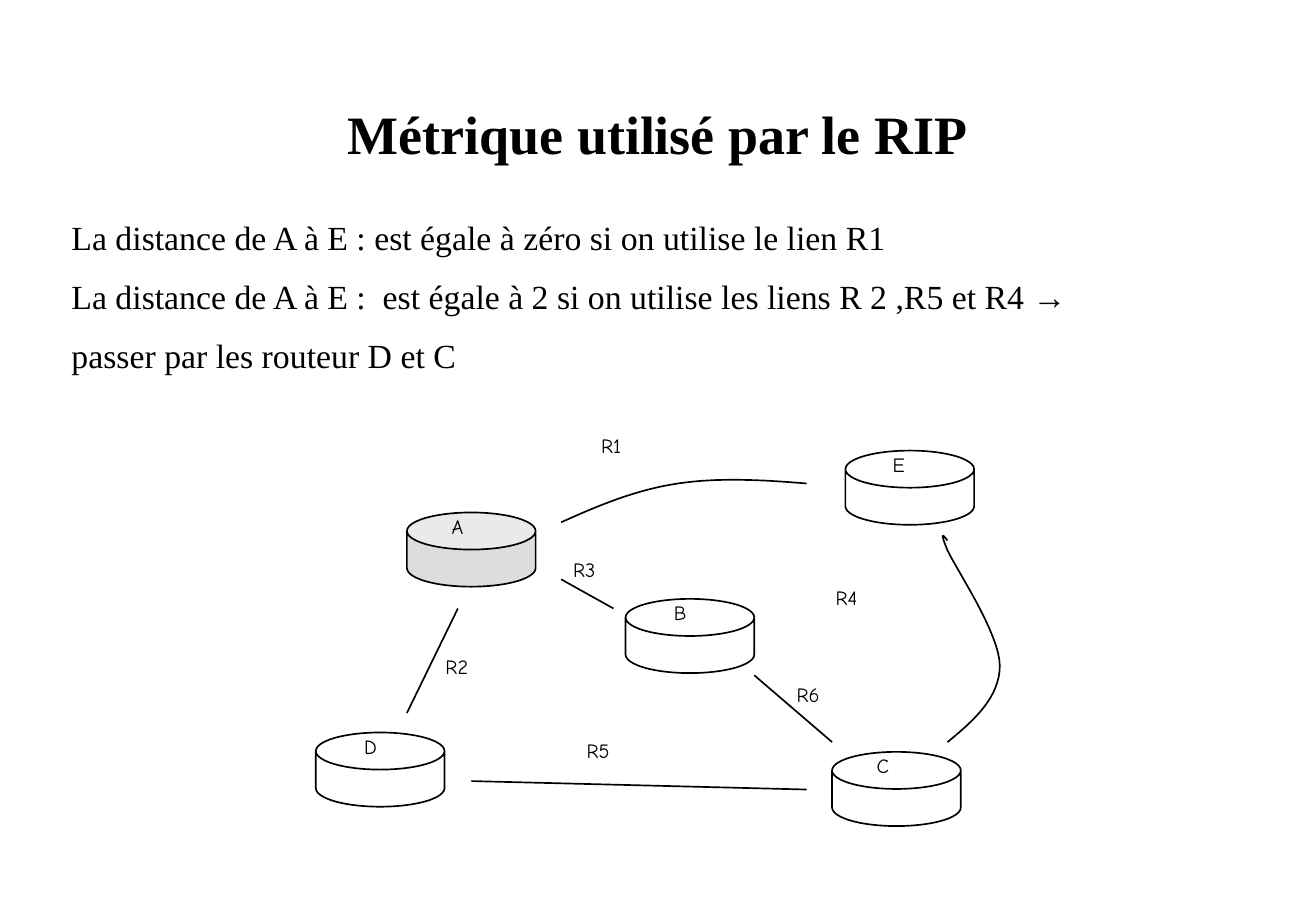
from lxml.etree import SubElement
from pptx import Presentation
from pptx.dml.color import RGBColor
from pptx.enum.shapes import MSO_CONNECTOR as Connector, MSO_SHAPE as Shape
from pptx.enum.text import MSO_ANCHOR as Anchor, PP_ALIGN as Align
from pptx.oxml.ns import qn
from pptx.util import Pt

BLACK = RGBColor(0x00, 0x00, 0x00)
GREY = RGBColor(0xDD, 0xDD, 0xDD)
SERIF = "Times New Roman"
COMIC = "Comic Neue"

TITLE = "Métrique utilisé par le RIP"
DISTANCES = [
    "La distance de A à E : est égale à zéro si on utilise le lien R1",
    "La distance de A à E :  est égale à 2 si on utilise les liens R 2 ,R5 et R4 →",
    "passer par les routeur D et C",
]
# name: left, top, letter indent, fill
ROUTERS = {
    "A": (241.2, 303.8, 19.4, GREY),
    "B": (370.8, 355, 21.6, None),
    "C": (493.2, 445.7, 19.4, None),
    "D": (187.2, 434.2, 21.6, None),
    "E": (501.1, 267.1, 20.9, None),
}
ROUTER_SIZE = (76.3, 44)
LETTER_RISE = 2.7
STRAIGHT_LINKS = [
    (332.6, 343.4, 363.6, 360.7),
    (271.4, 360.7, 241.2, 422.6),
    (279.4, 463, 478.1, 468),
    (447.1, 400.3, 493.2, 439.9),
]
CURVED_LINKS = [
    [(332.6, 309.6), (355, 299.5), (377.3, 290.2), (401.8, 286.6),
     (425.5, 283), (452.2, 284.4), (478.1, 286.6)],
    [(561.6, 320.4), (559.4, 317.5), (556.6, 313.9), (561.6, 326.2),
     (567.4, 338.4), (592.6, 375.8), (592.6, 394.6),
     (592.6, 413.3), (577.4, 427), (561.6, 439.9)],
]
LINK_LABELS = {
    "R1": (349.2, 253.4),
    "R2": (257, 384.5),
    "R3": (332.6, 326.9),
    "R4": (488.2, 343.4),
    "R5": (340.6, 434.2),
    "R6": (465.1, 401),
}
LABEL_SIZE = (36, 25)
CURVE_STEPS = 16
CURVE_SCALE = 100


def add_text(slide, box, lines, font_name, size, bold=False, align=Align.LEFT,
             anchor=Anchor.TOP, gap=0):
    frame = slide.shapes.add_textbox(*map(Pt, box)).text_frame
    frame.word_wrap = True
    frame.vertical_anchor = anchor
    for index, line in enumerate(lines):
        paragraph = frame.add_paragraph() if index else frame.paragraphs[0]
        paragraph.alignment = align
        if index:
            paragraph.space_before = Pt(gap)
        run = paragraph.add_run()
        run.text = line
        run.font.name = font_name
        run.font.size = Pt(size)
        run.font.bold = bold
        run.font.color.rgb = BLACK


def outline(shape):
    shape.line.color.rgb = BLACK
    shape.line.width = Pt(1)


def add_router(slide, left, top, fill):
    router = slide.shapes.add_shape(Shape.CAN, *map(Pt, (left, top, *ROUTER_SIZE)))
    router.adjustments[0] = 0.5
    router.shadow.inherit = False
    if fill is None:
        router.fill.background()
    else:
        router.fill.solid()
        router.fill.fore_color.rgb = fill
    outline(router)


def bezier_point(corners, t):
    weights = ((1 - t) ** 3, 3 * t * (1 - t) ** 2, 3 * t ** 2 * (1 - t), t ** 3)
    return tuple(
        CURVE_SCALE * sum(weight * value for weight, value in zip(weights, axis))
        for axis in zip(*corners)
    )


def add_curve(slide, corners):
    points = [
        bezier_point(corners[start:start + 4], step / CURVE_STEPS)
        for start in range(0, len(corners) - 1, 3)
        for step in range(1, CURVE_STEPS + 1)
    ]
    start_x, start_y = bezier_point(corners[:4], 0)
    builder = slide.shapes.build_freeform(start_x, start_y, scale=Pt(1) / CURVE_SCALE)
    builder.add_line_segments(points, close=False)
    curve = builder.convert_to_shape()
    curve.shadow.inherit = False
    curve.fill.background()
    outline(curve)


def add_link(slide, ends):
    link = slide.shapes.add_connector(Connector.STRAIGHT, *map(Pt, ends))
    outline(link)
    SubElement(link._element.spPr, qn("a:effectLst"))


def main():
    presentation = Presentation()
    presentation.slide_width = Pt(780)
    presentation.slide_height = Pt(540)
    slide = presentation.slides.add_slide(presentation.slide_layouts[6])

    add_text(slide, (28, 36, 724, 85), [TITLE], SERIF, 32, bold=True,
             align=Align.CENTER, anchor=Anchor.MIDDLE)
    for name, (left, top, indent, fill) in ROUTERS.items():
        add_router(slide, left, top, fill)
        add_text(slide, (left + indent, top - LETTER_RISE, *LABEL_SIZE), [name], COMIC, 12)
    for corners in CURVED_LINKS:
        add_curve(slide, corners)
    for ends in STRAIGHT_LINKS:
        add_link(slide, ends)
    for name, position in LINK_LABELS.items():
        add_text(slide, (*position, *LABEL_SIZE), [name], COMIC, 12)
    add_text(slide, (35.3, 125, 708.5, 110), DISTANCES, SERIF, 20, gap=11)

    presentation.save("out.pptx")


if __name__ == "__main__":
    main()
